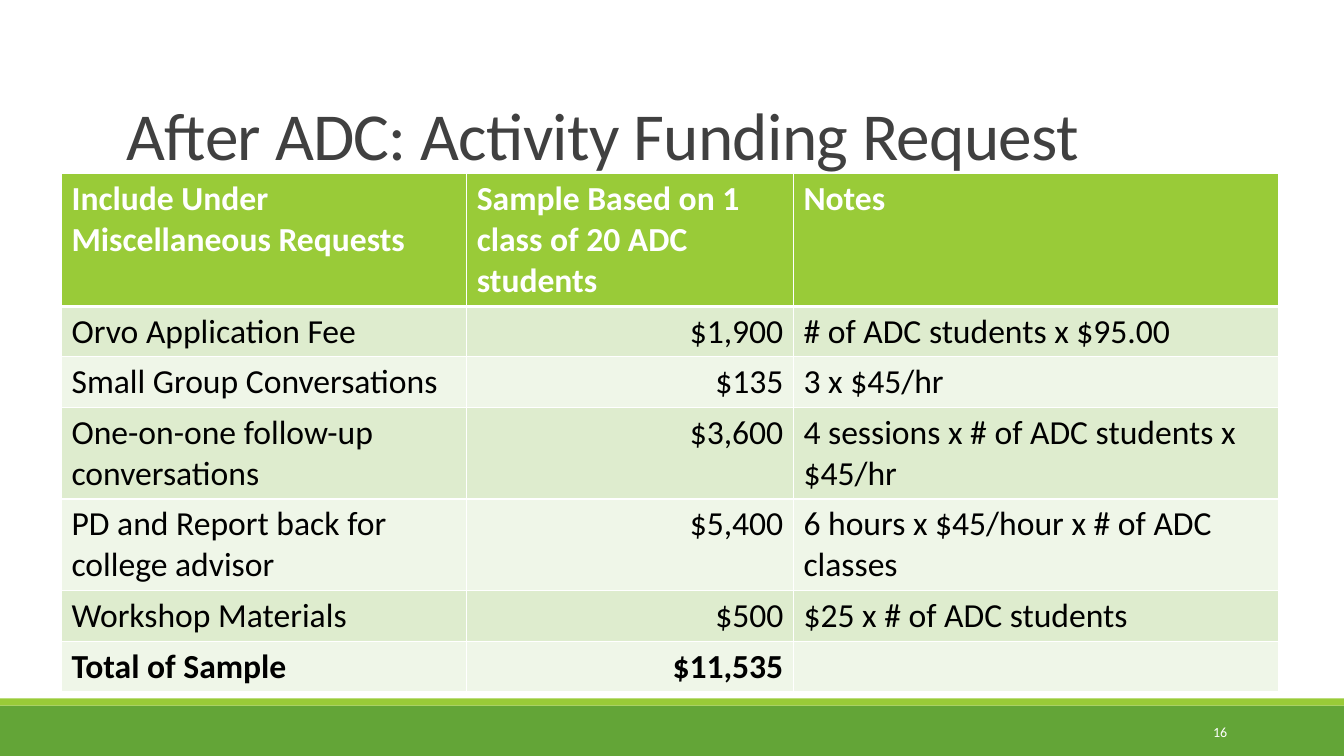
from pptx import Presentation
from pptx.dml.color import RGBColor
from pptx.enum.shapes import MSO_CONNECTOR, MSO_SHAPE
from pptx.enum.text import MSO_ANCHOR, MSO_AUTO_SIZE, PP_ALIGN
from pptx.oxml.ns import qn
from pptx.util import Inches, Pt
from lxml.etree import SubElement

TITLE = "After ADC: Activity Funding Request"
PAGE_NUMBER = "16"
HEADINGS = ("Include Under Miscellaneous Requests",
            "Sample Based on 1 class of 20 ADC students", "Notes")
REQUESTS = [
    ("Orvo Application Fee", "$1,900", "# of ADC students x $95.00"),
    ("Small Group Conversations", "$135", "3 x $45/hr"),
    ("One-on-one follow-up conversations", "$3,600",
     "4 sessions x # of ADC students x $45/hr"),
    ("PD and Report back for college advisor", "$5,400",
     "6 hours x $45/hour x # of ADC classes"),
    ("Workshop Materials", "$500", "$25 x # of ADC students"),
    ("Total of Sample", "$11,535", ""),
]
LINES_PER_ROW = (3, 1, 1, 2, 2, 1, 1)
COLUMN_WIDTHS = (4.02, 3.24, 4.81)
COLORS = {"green": "63A537", "lime": "99CB38", "odd": "DEECCE", "even": "EFF6E8",
          "title": "404040", "body": "000000", "white": "FFFFFF", "rule": "808080"}
FONT = "Calibri"
WIDTH, HEIGHT = 13.33, 7.5
FOOTER_TOP, STRIPE = 7, 0.07
TABLE_LEFT, TABLE_TOP = 0.61, 1.72
LINE_HEIGHT, ROW_PADDING = 0.41, 0.09


def color(key):
    return RGBColor.from_string(COLORS[key])


def write(frame, text, size, ink, bold=False, align=PP_ALIGN.LEFT,
          anchor=MSO_ANCHOR.TOP, line_spacing=None, tracking=None):
    frame.word_wrap = True
    frame.vertical_anchor = anchor
    paragraph = frame.paragraphs[0]
    paragraph.alignment = align
    if line_spacing:
        paragraph.line_spacing = line_spacing
    if not text:
        return
    run = paragraph.add_run()
    run.text = text
    run.font.name = FONT
    run.font.size = Pt(size)
    run.font.bold = bold
    run.font.color.rgb = color(ink)
    if tracking:
        run.font._element.set("spc", str(round(tracking * 100)))


def add_band(shapes, top, height, fill):
    band = shapes.add_shape(MSO_SHAPE.RECTANGLE, 0, Inches(top),
                            Inches(WIDTH), Inches(height))
    band.shadow.inherit = False
    band.fill.solid()
    band.fill.fore_color.rgb = color(fill)
    band.line.fill.background()


def add_rule(shapes):
    rule = shapes.add_connector(MSO_CONNECTOR.STRAIGHT, Inches(1.31), Inches(1.9),
                                Inches(12.21), Inches(1.9))
    rule.line.color.rgb = color("rule")
    rule.line.width = Pt(0.5)
    SubElement(rule._element.spPr, qn("a:effectLst"))


def add_title(shapes):
    title = shapes.title
    title.left, title.top = Inches(1.15), Inches(0.19)
    title.width, title.height = Inches(11), Inches(1.59)
    title.text_frame.auto_size = MSO_AUTO_SIZE.NONE
    write(title.text_frame, TITLE, 48, "title", anchor=MSO_ANCHOR.BOTTOM,
          line_spacing=0.85, tracking=-0.5)


def add_page_number(shapes):
    page = shapes.add_textbox(Inches(10.83), Inches(7.06), Inches(1.44), Inches(0.4))
    write(page.text_frame, PAGE_NUMBER, 10, "white", align=PP_ALIGN.RIGHT,
          anchor=MSO_ANCHOR.MIDDLE)


def add_borders(cell, top, bottom):
    properties = cell._tc.get_or_add_tcPr()
    for side, width in (("L", 1), ("R", 1), ("T", top), ("B", bottom)):
        border = SubElement(properties, qn(f"a:ln{side}"), w=str(Pt(width)))
        fill = SubElement(border, qn("a:solidFill"))
        SubElement(fill, qn("a:srgbClr"), val=COLORS["white"])


def add_requests(shapes):
    rows = [HEADINGS, *REQUESTS]
    heights = [lines * LINE_HEIGHT + ROW_PADDING for lines in LINES_PER_ROW]
    table = shapes.add_table(len(rows), len(HEADINGS), Inches(TABLE_LEFT),
                             Inches(TABLE_TOP), Inches(sum(COLUMN_WIDTHS)),
                             Inches(sum(heights))).table
    for column, width in zip(table.columns, COLUMN_WIDTHS):
        column.width = Inches(width)
    for r, (texts, height) in enumerate(zip(rows, heights)):
        table.rows[r].height = Inches(height)
        heading = r == 0
        fill = "lime" if heading else "odd" if r % 2 else "even"
        for c, text in enumerate(texts):
            cell = table.cell(r, c)
            add_borders(cell, top=3 if r == 1 else 1, bottom=3 if heading else 1)
            cell.fill.solid()
            cell.fill.fore_color.rgb = color(fill)
            amount = c == 1 and not heading
            write(cell.text_frame, text, 24, "white" if heading else "body",
                  bold=heading or r == len(REQUESTS),
                  align=PP_ALIGN.RIGHT if amount else PP_ALIGN.LEFT)


def main():
    deck = Presentation()
    deck.slide_width, deck.slide_height = Inches(WIDTH), Inches(HEIGHT)
    shapes = deck.slides.add_slide(deck.slide_layouts[5]).shapes
    add_band(shapes, FOOTER_TOP, HEIGHT - FOOTER_TOP, "green")
    add_band(shapes, FOOTER_TOP - STRIPE, STRIPE, "lime")
    add_rule(shapes)
    add_title(shapes)
    add_page_number(shapes)
    add_requests(shapes)
    deck.save("out.pptx")


if __name__ == "__main__":
    main()
